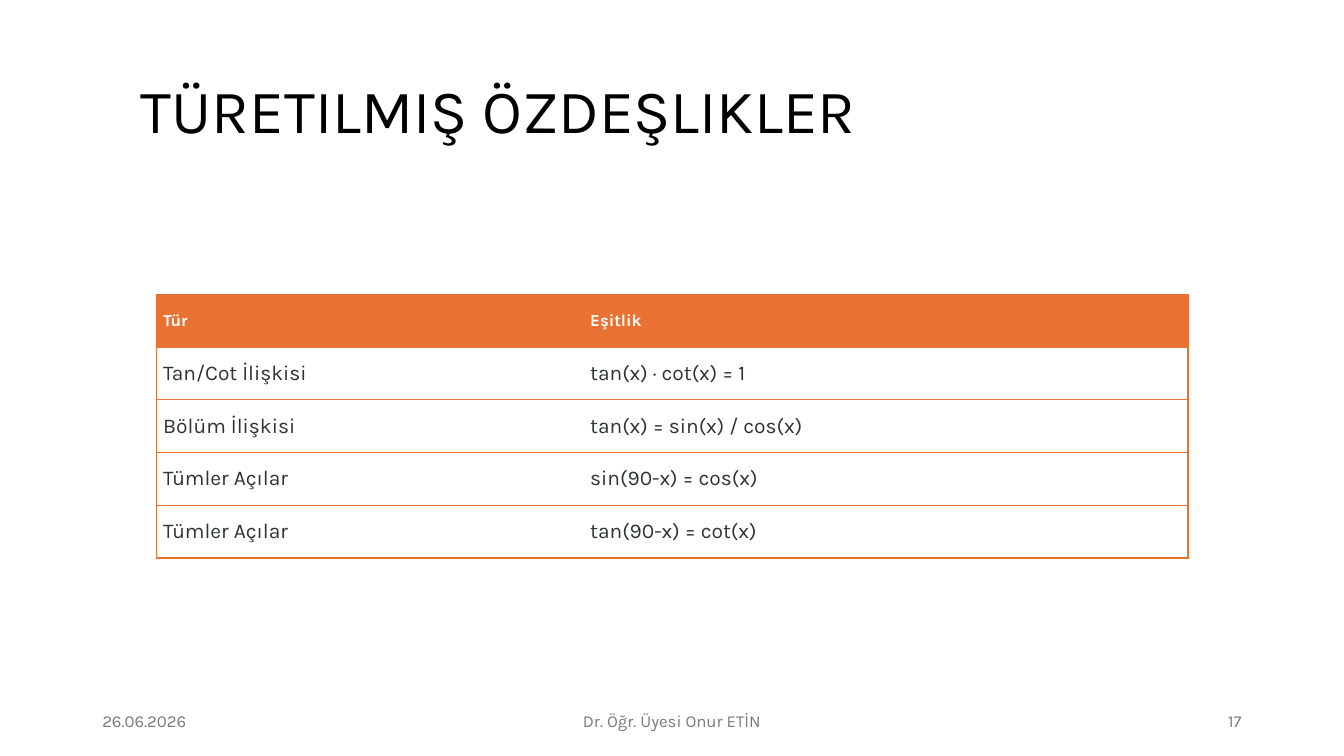
from dataclasses import dataclass

from lxml import etree
from pptx import Presentation
from pptx.dml.color import RGBColor
from pptx.enum.text import MSO_ANCHOR, PP_ALIGN
from pptx.oxml.ns import qn
from pptx.util import Pt

MIDDLE = MSO_ANCHOR.MIDDLE
LEFT, CENTER, RIGHT = PP_ALIGN.LEFT, PP_ALIGN.CENTER, PP_ALIGN.RIGHT


@dataclass(frozen=True)
class Theme:
    font: str = "Karla"
    title: str = "000000"
    footer: str = "797979"
    accent: str = "E97132"
    header: str = "FFFFFF"
    body: str = "2D3436"
    title_size: float = 44
    small_size: float = 12
    body_size: float = 15


THEME = Theme()

IDENTITIES = [
    ("Tür", "Eşitlik"),
    ("Tan/Cot İlişkisi", "tan(x) · cot(x) = 1"),
    ("Bölüm İlişkisi", "tan(x) = sin(x) / cos(x)"),
    ("Tümler Açılar", "sin(90-x) = cos(x)"),
    ("Tümler Açılar", "tan(90-x) = cot(x)"),
]
COLUMN_WIDTHS = (305, 432)
ROW_HEIGHT = 37.7


def style_paragraph(para, size, color, bold=False, align=LEFT):
    para.alignment = align
    para.font.name = THEME.font
    para.font.size = Pt(size)
    para.font.bold = bold
    para.font.color.rgb = RGBColor.from_string(color)


def add_text(page, text, left, top, width, height, size, color, align=LEFT):
    box = page.shapes.add_textbox(Pt(left), Pt(top), Pt(width), Pt(height))
    frame = box.text_frame
    frame.word_wrap = True
    frame.vertical_anchor = MIDDLE
    frame.text = text
    style_paragraph(frame.paragraphs[0], size, color, align=align)
    return frame.paragraphs[0]


def set_borders(cell, sides):
    """Draw the named sides (L, R, T, B) and clear the others."""
    properties = cell._tc.get_or_add_tcPr()
    for side in "LRTB":
        line = etree.SubElement(properties, qn(f"a:ln{side}"), w=str(Pt(1)))
        if side in sides:
            fill = etree.SubElement(line, qn("a:solidFill"))
            etree.SubElement(fill, qn("a:srgbClr"), val=THEME.accent)
        else:
            etree.SubElement(line, qn("a:noFill"))


def fill_cell(cell, text, is_header, sides):
    set_borders(cell, sides)
    if is_header:
        cell.fill.solid()
        cell.fill.fore_color.rgb = RGBColor.from_string(THEME.accent)
    else:
        cell.fill.background()
    cell.margin_left = cell.margin_right = Pt(5)
    cell.margin_top = cell.margin_bottom = Pt(2.5)
    cell.vertical_anchor = MIDDLE
    cell.text = text
    size = THEME.small_size if is_header else THEME.body_size
    color = THEME.header if is_header else THEME.body
    style_paragraph(cell.text_frame.paragraphs[0], size, color, bold=is_header)


def add_identity_table(page, left, top):
    frame = page.shapes.add_table(
        len(IDENTITIES), len(COLUMN_WIDTHS), Pt(left), Pt(top),
        Pt(sum(COLUMN_WIDTHS)), Pt(ROW_HEIGHT * len(IDENTITIES)))
    table = frame.table
    table.horz_banding = False
    for column, width in zip(table.columns, COLUMN_WIDTHS):
        column.width = Pt(width)
    for row_index, texts in enumerate(IDENTITIES):
        table.rows[row_index].height = Pt(ROW_HEIGHT)
        for column_index, text in enumerate(texts):
            sides = "TBL" if column_index == 0 else "TBR"
            fill_cell(table.cell(row_index, column_index), text,
                      row_index == 0, sides)


def main():
    deck = Presentation()
    deck.slide_width, deck.slide_height = Pt(960), Pt(540)
    page = deck.slides.add_slide(deck.slide_layouts[6])

    # Title
    title = add_text(page, "TÜRETILMIŞ ÖZDEŞLIKLER", 93.6, 28.8, 800.6, 104.4,
                     THEME.title_size, THEME.title)
    title.line_spacing = 0.9

    # Table of identities
    add_identity_table(page, 111.6, 210.2)

    # Footer: date, author, page number
    for text, left, width, align in (
            ("26.06.2026", 66, 216, LEFT),
            ("Dr. Öğr. Üyesi Onur ETİN", 318, 324, CENTER),
            ("17", 678, 216, RIGHT)):
        add_text(page, text, left, 500.5, width, 28.75,
                 THEME.small_size, THEME.footer, align)

    deck.save("out.pptx")


if __name__ == "__main__":
    main()
